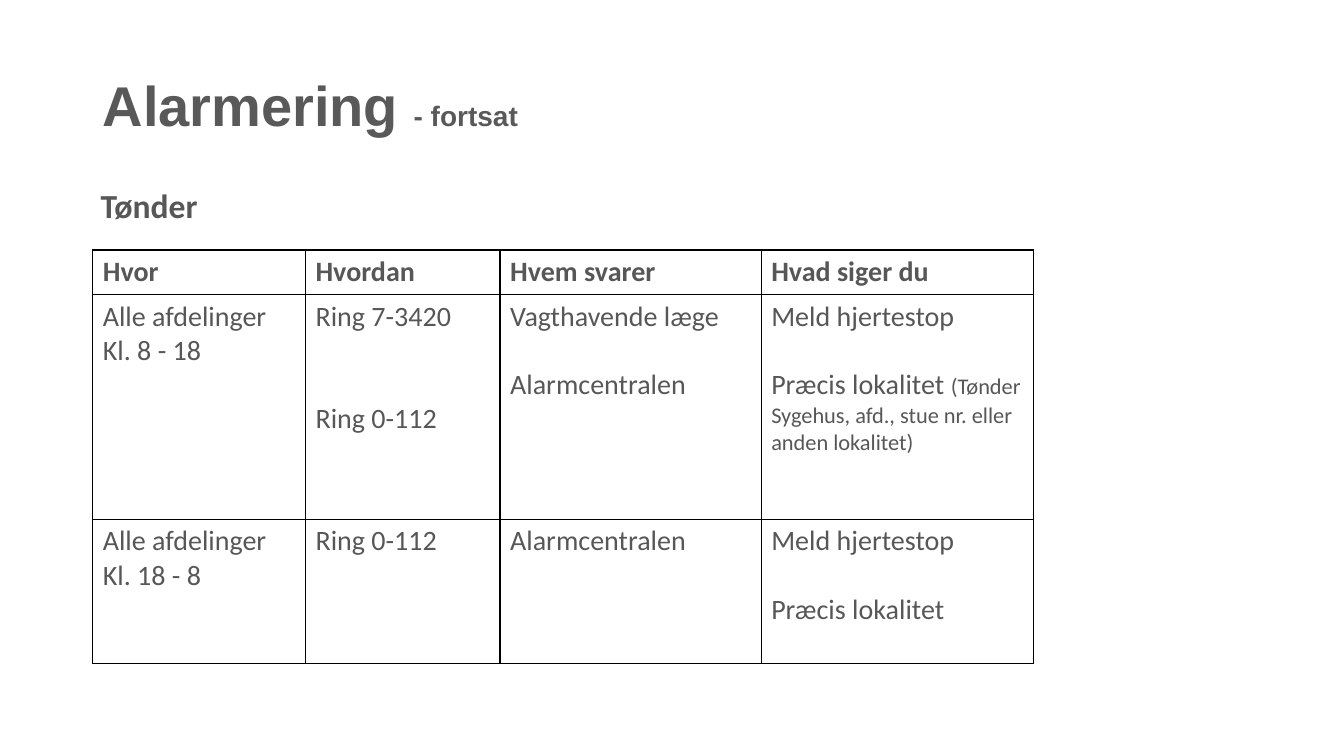
from lxml import etree
from pptx import Presentation
from pptx.dml.color import RGBColor
from pptx.enum.text import MSO_ANCHOR
from pptx.oxml.ns import qn
from pptx.util import Inches, Pt

MIDDLE = MSO_ANCHOR.MIDDLE
GREY, BLACK, WHITE = "575757", "000000", "FFFFFF"
LINE = 24.4  # height of one table text line, in points


def color(code):
    return RGBColor.from_string(code)


class Sheet:
    """Holds the style and the current slide."""

    style = {"name": "Calibri", "size": Pt(20), "bold": False}

    def __init__(self, slide):
        self.slide = slide

    def add_runs(self, para, runs, tint=GREY, **extra):
        for text, size in runs:
            run = para.add_run()
            run.text = text
            look = {**self.style, "size": Pt(size), **extra}
            for key, value in look.items():
                setattr(run.font, key, value)
            run.font.color.rgb = color(tint)

    def label(self, spot, runs, wrap=True, space=1.0, **extra):
        box = self.slide.shapes.add_textbox(*map(Inches, spot))
        frame = box.text_frame
        frame.word_wrap = wrap
        frame.vertical_anchor = MIDDLE
        para = frame.paragraphs[0]
        para.line_spacing = space
        self.add_runs(para, runs, **extra)

    def border(self, cell):
        props = cell._tc.get_or_add_tcPr()
        for side in ("a:lnL", "a:lnR", "a:lnT", "a:lnB"):
            line = etree.SubElement(props, qn(side), w=str(Pt(1)))
            fill = etree.SubElement(line, qn("a:solidFill"))
            etree.SubElement(fill, qn("a:srgbClr"), val=BLACK)

    def fill(self, cell, paras, bold):
        self.border(cell)
        cell.fill.solid()
        cell.fill.fore_color.rgb = color(WHITE)
        frame = cell.text_frame
        for i, (gap, runs) in enumerate(paras):
            para = frame.add_paragraph() if i else frame.paragraphs[0]
            if gap:
                para.space_before = Pt(gap * LINE)
            self.add_runs(para, runs, bold=bold)

    def table(self, left, top, cols, rows, data):
        spot = map(Inches, (left, top, sum(cols), sum(rows)))
        grid = self.slide.shapes.add_table(len(rows), len(cols), *spot).table
        grid.first_row = grid.horz_banding = False
        for col, width in zip(grid.columns, cols):
            col.width = Inches(width)
        for row, high in zip(grid.rows, rows):
            row.height = Inches(high)
        for r, line in enumerate(data):
            for c, paras in enumerate(line):
                self.fill(grid.cell(r, c), paras, bold=r == 0)


def item(text, gap=0):
    """One paragraph, with a gap above counted in lines."""
    return gap, [(text, 20)]


def main():
    deck = Presentation()
    deck.slide_width, deck.slide_height = Inches(13.33), Inches(7.5)
    sheet = Sheet(deck.slides.add_slide(deck.slide_layouts[6]))

    # Table of alarm calls
    heads = ["Hvor", "Hvordan", "Hvem svarer", "Hvad siger du"]
    place = (1, [("Præcis lokalitet ", 20),
                 ("(Tønder Sygehus, afd., stue nr. eller anden lokalitet)", 16)])
    data = [
        [[item(head)] for head in heads],
        [
            [item("Alle afdelinger"), item("Kl. 8 - 18")],
            [item("Ring 7-3420"), item("Ring 0-112", 2)],
            [item("Vagthavende læge"), item("Alarmcentralen", 1)],
            [item("Meld hjertestop"), place],
        ],
        [
            [item("Alle afdelinger"), item("Kl. 18 - 8")],
            [item("Ring 0-112")],
            [item("Alarmcentralen")],
            [item("Meld hjertestop"), item("Præcis lokalitet", 1)],
        ],
    ]
    sheet.table(0.92, 2.48, [2.11, 1.93, 2.59, 2.7], [0.43, 2.23, 1.43], data)

    # Title and place name
    sheet.label((0.92, 0.71, 8.97, 0.73),
                [("Alarmering ", 40), ("- fortsat", 20)],
                space=0.9, tint="595959", name="Arial", bold=True)
    sheet.label((0.9, 1.78, 1.25, 0.5), [("Tønder", 24)],
                wrap=False, bold=True)

    deck.save("out.pptx")


if __name__ == "__main__":
    main()
